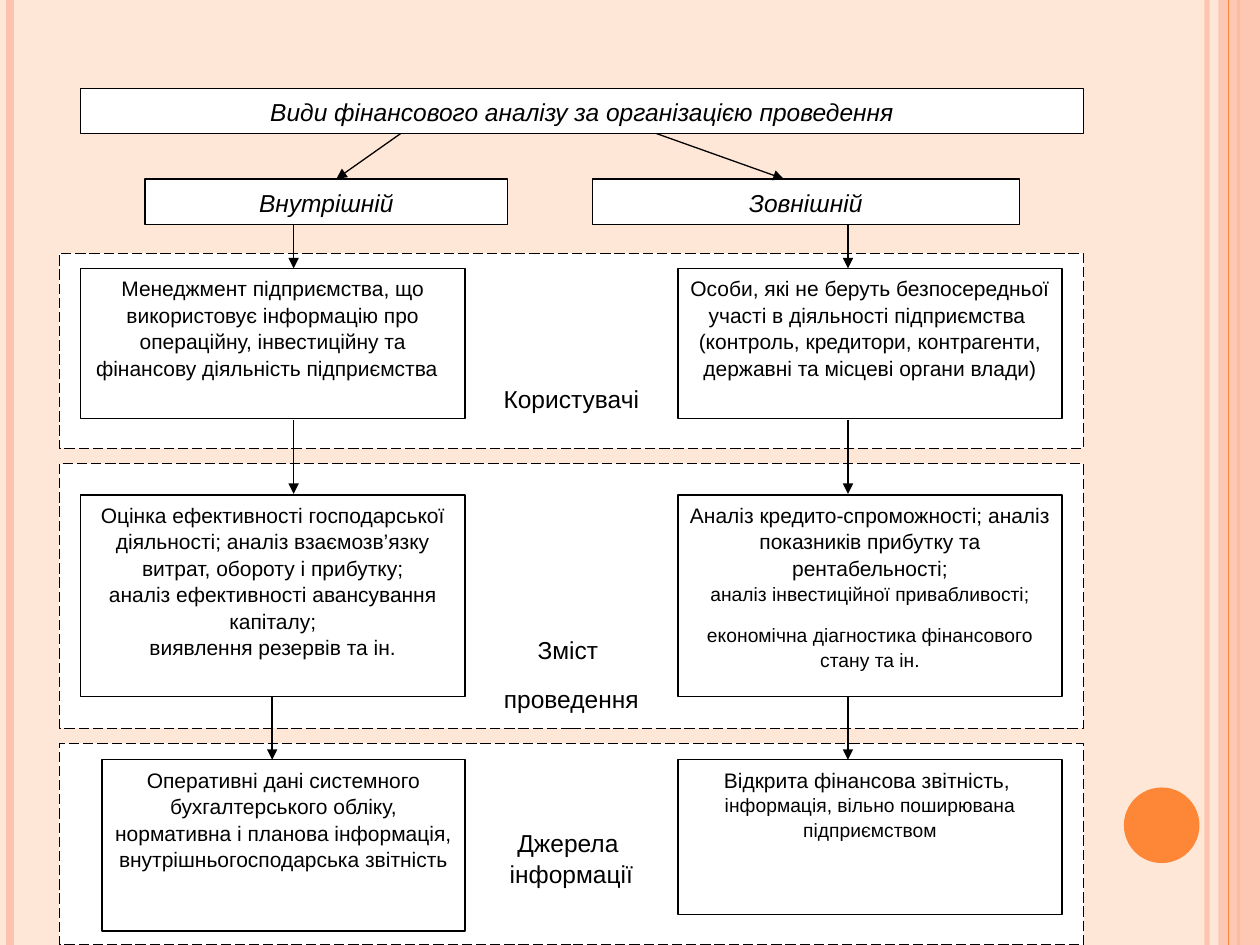
"""Build a slide charting the kinds of financial analysis by organisation."""
from pptx import Presentation
from pptx.dml.color import RGBColor
from pptx.enum import dml, shapes, text
from pptx.oxml import ns, xmlchemy
from pptx.util import Inches, Pt

COLORS = {
    "paper": "FFE7D7",
    "box": "FFFFFF",
    "ink": "000000",
    "peach": "FEC3AE",
    "orange": "FE8637",
}
FONT = "Arial"
LEFT, RIGHT, BOX_WIDTH = 0.64, 5.38, 3.05
LEFT_AXIS, RIGHT_AXIS = 2.33, 6.73

HEADING = "Види фінансового аналізу за організацією проведення"
KINDS = [
    ((1.15, 1.42, 2.88, 0.36), "Внутрішній"),
    ((4.7, 1.42, 3.39, 0.36), "Зовнішній"),
]
ZONES = [
    (2.01, 1.55, 1.03, [("Користувачі", 14, 0)]),
    (3.68, 2.1, 1.35, [("Зміст ", 14, 10), ("проведення", 14, 10)]),
    (5.9, 1.6, 0.66, [("Джерела ", 14, 0), ("інформації", 14, 10)]),
]
DETAILS = [
    ((LEFT, 2.13, BOX_WIDTH, 1.19), [
        ("Менеджмент підприємства, що використовує інформацію про операційну, "
         "інвестиційну та фінансову діяльність підприємства  ", 12, 0)]),
    ((RIGHT, 2.13, BOX_WIDTH, 1.19), [
        ("Особи, які не беруть безпосередньої участі в діяльності підприємства  "
         "(контроль, кредитори, контрагенти, державні та місцеві органи влади)", 12, 0)]),
    ((LEFT, 3.93, BOX_WIDTH, 1.6), [
        ("Оцінка ефективності господарської діяльності; аналіз взаємозв’язку "
         "витрат, обороту і прибутку;", 12, 0),
        ("аналіз ефективності авансування капіталу;", 12, 0),
        ("виявлення резервів та ін.", 12, 0)]),
    ((RIGHT, 3.93, BOX_WIDTH, 1.6), [
        ("Аналіз кредито-спроможності; аналіз показників прибутку та "
         "рентабельності;", 12, 0),
        ("аналіз інвестиційної привабливості;", 11, 10),
        ("економічна діагностика фінансового стану та ін.", 11, 10)]),
    ((0.81, 6.03, 2.88, 1.36), [
        ("Оперативні дані системного бухгалтерського обліку, нормативна і "
         "планова інформація, ", 12, 0),
        ("внутрішньогосподарська звітність", 12, 0)]),
    ((RIGHT, 6.03, BOX_WIDTH, 1.23), [
        ("Відкрита фінансова звітність, ", 12, 0),
        ("інформація, вільно поширювана підприємством", 11, 10)]),
]
ARROWS = [
    (3.18, 1.06, 2.67, 1.42),
    (5.21, 1.06, 6.22, 1.42),
    (LEFT_AXIS, 1.78, LEFT_AXIS, 2.13),
    (RIGHT_AXIS, 1.78, RIGHT_AXIS, 2.13),
    (LEFT_AXIS, 3.33, LEFT_AXIS, 3.92),
    (RIGHT_AXIS, 3.33, RIGHT_AXIS, 3.92),
    (2.16, 5.53, 2.16, 6.03),
    (RIGHT_AXIS, 5.53, RIGHT_AXIS, 6.03),
]


def color(name):
    """Return the named palette colour."""
    return RGBColor.from_string(COLORS[name])


def add_child(parent, tag, **attributes):
    """Append a DrawingML element to a parent element."""
    child = xmlchemy.OxmlElement(tag)
    for key, value in attributes.items():
        child.set(key, value)
    parent.append(child)
    return child


def set_opacity(fill_holder, percent):
    """Make the solid fill inside an element partly transparent."""
    tone = next(fill_holder.iter(ns.qn("a:srgbClr")))
    add_child(tone, "a:alpha", val=str(percent * 1000))


def add_line(page, ends, tone="ink", width=0.75):
    """Draw a straight line without a shadow."""
    line = page.shapes.add_connector(
        shapes.MSO_CONNECTOR.STRAIGHT, *(Inches(value) for value in ends))
    line.line.color.rgb = color(tone)
    line.line.width = Pt(width)
    add_child(line._element.spPr, "a:effectLst")
    return line


def add_arrow(page, ends):
    """Draw a line with a triangular head at its end."""
    arrow = add_line(page, ends)
    add_child(arrow.line._get_or_add_ln(), "a:tailEnd", type="triangle")


def add_plain_shape(page, kind, place, tone):
    """Draw a filled shape with no outline."""
    shape = page.shapes.add_shape(kind, *(Inches(value) for value in place))
    shape.shadow.inherit = False
    shape.fill.solid()
    shape.fill.fore_color.rgb = color(tone)
    shape.line.fill.background()
    return shape


def write(box, paragraphs, italic=False, top=0.05, anchor=text.MSO_ANCHOR.TOP):
    """Write centred paragraphs given as wording, size and space after."""
    frame = box.text_frame
    frame.word_wrap = True
    frame.auto_size = text.MSO_AUTO_SIZE.NONE
    frame.vertical_anchor = anchor
    frame.margin_left = frame.margin_right = Inches(0.09)
    frame.margin_top, frame.margin_bottom = Inches(top), Inches(0.05)
    for index, (wording, size, after) in enumerate(paragraphs):
        para = frame.add_paragraph() if index else frame.paragraphs[0]
        para.alignment = text.PP_ALIGN.CENTER
        para.line_spacing = 1.05
        para.space_before, para.space_after = Pt(0), Pt(after)
        span = para.add_run()
        span.text = wording
        span.font.name = FONT
        span.font.size = Pt(size)
        span.font.italic = italic
        span.font.color.rgb = color("ink")


def outline(box):
    """Give a box a white fill and a thin black line."""
    box.fill.solid()
    box.fill.fore_color.rgb = color("box")
    box.line.color.rgb = color("ink")
    box.line.width = Pt(0.75)


def add_box(page, place, paragraphs, **options):
    """Draw an outlined rectangle holding text."""
    box = add_plain_shape(page, shapes.MSO_SHAPE.RECTANGLE, place, "box")
    outline(box)
    write(box, paragraphs, **options)
    return box


def add_heading(page):
    """Turn the title placeholder into the heading box."""
    title = page.shapes.title
    title.left, title.top = Inches(LEFT), Inches(0.7)
    title.width, title.height = Inches(7.96), Inches(0.36)
    outline(title)
    write(title, [(HEADING, 14, 0)], italic=True, anchor=text.MSO_ANCHOR.MIDDLE)


def add_decor(page):
    """Draw the background, the side stripes and the disc."""
    page.background.fill.solid()
    page.background.fill.fore_color.rgb = color("paper")
    stripe = add_line(page, (9.58, 0, 9.58, 7.5), "peach", 3)
    set_opacity(stripe.line._get_or_add_ln(), 93)
    add_line(page, (0.08, 0, 0.08, 7.5), "peach", 4.5)
    add_line(page, (9.83, 0, 9.83, 7.5), "orange", 1.5)
    band = add_plain_shape(page, shapes.MSO_SHAPE.RECTANGLE, (9.67, 0, 0.33, 7.5), "peach")
    set_opacity(band._element.spPr, 87)
    add_line(page, (9.75, 0, 9.75, 7.5), "orange")
    add_plain_shape(page, shapes.MSO_SHAPE.OVAL, (8.92, 6.25, 0.6, 0.6), "orange")


def main():
    """Build and save the slide."""
    deck = Presentation()
    deck.slide_width, deck.slide_height = Inches(10), Inches(7.5)
    page = deck.slides.add_slide(deck.slide_layouts[5])
    add_decor(page)
    add_heading(page)
    for place, wording in KINDS:
        add_box(page, place, [(wording, 14, 0)], italic=True,
                anchor=text.MSO_ANCHOR.MIDDLE)
    for top, height, label_top, label in ZONES:
        zone = add_box(page, (0.47, top, 8.13, height), label, top=label_top)
        zone.line.dash_style = dml.MSO_LINE.LONG_DASH
    for place, paragraphs in DETAILS:
        add_box(page, place, paragraphs)
    for ends in ARROWS:
        add_arrow(page, ends)
    deck.save("out.pptx")


if __name__ == "__main__":
    main()
